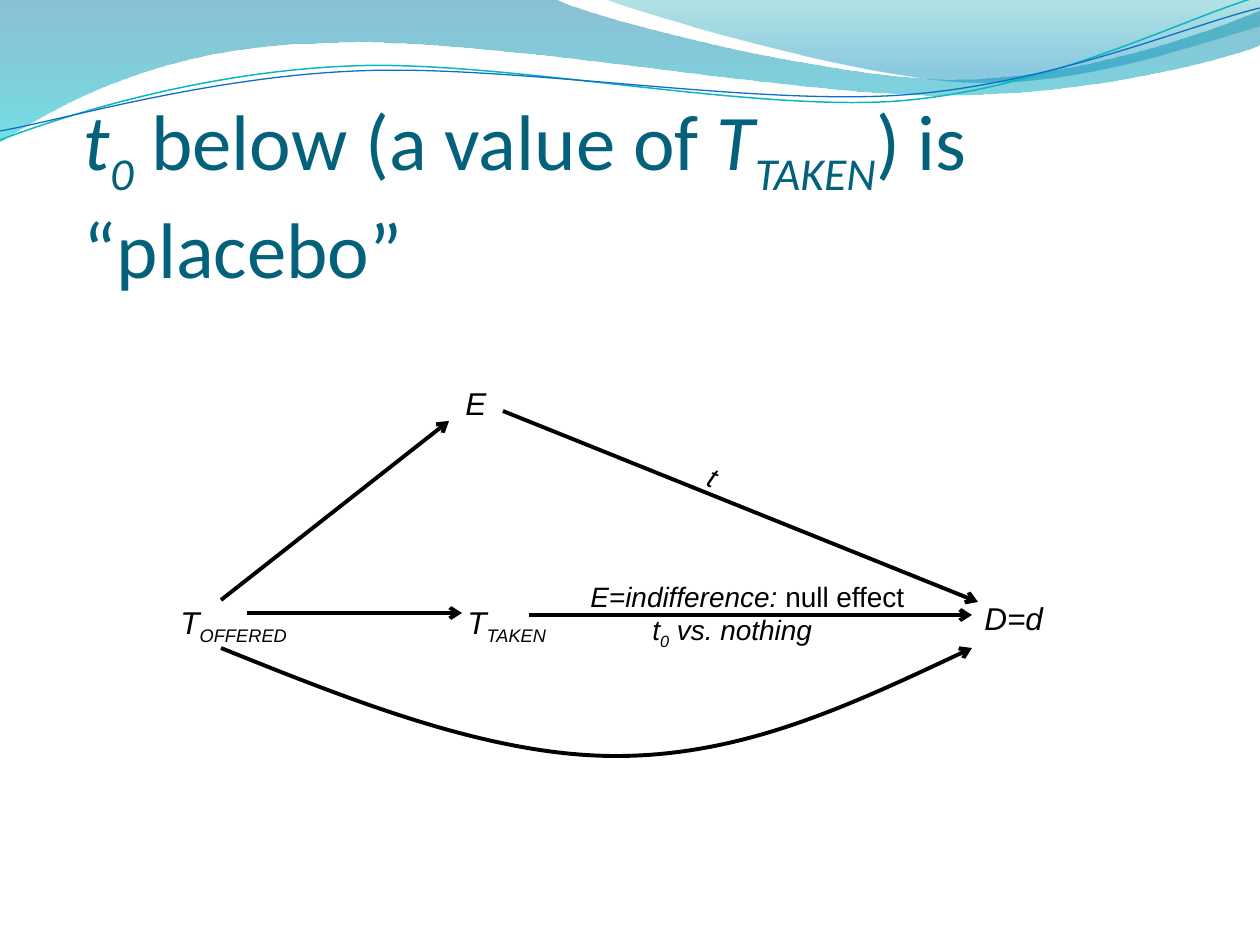
"""Build a slide with a causal diagram of treatment offered, taken and outcome."""
from dataclasses import dataclass

from lxml.etree import SubElement
from pptx import Presentation
from pptx.dml.color import RGBColor
from pptx.enum.shapes import MSO_CONNECTOR as Connector
from pptx.enum.text import MSO_ANCHOR as Anchor, MSO_AUTO_SIZE as AutoSize
from pptx.oxml.ns import qn
from pptx.util import Pt

PX = 914400 / 126


@dataclass(frozen=True)
class Theme:
    title_font: str = "Calibri"
    body_font: str = "Arial"
    title_color: str = "04617B"
    ink: str = "000000"
    title_size: int = 45
    node_size: int = 18
    label_size: int = 16
    arrow_width: float = 2.25


THEME = Theme()

TITLE = [("t", "i"), ("0", "is"), (" below (a value of ", ""), ("T", "i"),
         ("TAKEN", "is"), (") is “placebo”", "")]
TITLE_BOX = (84, 136, 1144, 158)

NODES = [
    ((168, 597, 158, 50), [("T", "i"), ("OFFERED", "is")]),
    ((455, 597, 113, 50), [("T", "i"), ("TAKEN", "is")]),
    ((972, 593, 92, 55), [("D=d", "i")]),
    ((453, 378, 50, 50), [("E", "i")]),
]

EDGE_LABEL_BOX = (696, 457, 49, 47)
EDGE_LABEL = [("t", "i")]
EDGE_LABEL_ANGLE = 23.3
EFFECT_BOX = (578, 573, 344, 81)
EFFECT_LINES = [
    [("E=indifference: ", "i"), ("null effect", "")],
    [("t", "i"), ("0", "is"), (" vs. nothing", "i")],
]
EFFECT_INDENTS = (0, 62)

ARROWS = [
    ((529, 615), (972, 615)),
    ((503, 411), (978, 602)),
    ((221, 600), (449, 421)),
    ((247, 613), (462, 613)),
]
ARC = [(221, 648), (355, 702, 491, 756, 616, 756), (743, 756, 857, 702, 972, 648)]

WAVE_BANDS = [
    ([(0, 0), (554, -1), (600, 21, 837, 79, 955, 79), (1075, 79, 1207, 33, 1260, 11),
      (1261, 45), (1239, 55, 1096, 96, 940, 95), (784, 95, 481, 35, 324, 43),
      (163, 45, 58, 105, -1, 142)],
     [(0, "0074A1", 45), (1, "00C6CF", 55)]),
    ([(604, -1), (641, 14, 859, 78, 969, 82), (1079, 87, 1211, 40, 1260, 26), (1260, 0)],
     [(0, "00A1A9", 30), (0.8, "008BBF", 45)]),
]
WAVE_LINES = [
    ([(0, 140), (60, 117, 199, 72, 349, 66), (498, 59, 747, 112, 898, 101),
      (1049, 89, 1182, 19, 1257, -3)], "0AB8BF", 0.85),
    ([(0, 131), (59, 121, 207, 77, 357, 71), (508, 64, 752, 106, 903, 95),
      (1053, 84, 1186, 26, 1260, 8)], "0F6FC6", 0.75),
]


def emu(*lengths):
    return [round(length * PX) for length in lengths]


def add_outline(slide, segments, close):
    points = [tuple(emu(*segment[i:i + 2]))
              for segment in segments for i in range(0, len(segment), 2)]
    builder = slide.shapes.build_freeform(*points[0], scale=1.0)
    builder.add_line_segments(points[1:], close=close)
    shape = builder.convert_to_shape()
    shape.shadow.inherit = False
    bend_curves(shape, segments)
    return shape


def bend_curves(shape, segments):
    steps = iter(list(shape._element.spPr.iter(qn("a:lnTo"))))
    for segment in segments[1:]:
        first = next(steps)
        if len(segment) == 6:
            first.tag = qn("a:cubicBezTo")
            for _ in range(2):
                step = next(steps)
                first.append(step[0])
                step.getparent().remove(step)


def add_band(slide, segments, stops):
    shape = add_outline(slide, segments, close=True)
    shape.line.fill.background()
    shape.fill.gradient()
    shape.fill.gradient_angle = 270
    for stop, (position, color, _) in zip(shape.fill.gradient_stops, stops):
        stop.position = position
        stop.color.rgb = RGBColor.from_string(color)
    for element, (_, _, opacity) in zip(shape._element.spPr.iter(qn("a:srgbClr")), stops):
        SubElement(element, qn("a:alpha"), val=str(opacity * 1000))


def style_line(shape, color, width, arrow=False):
    shape.line.color.rgb = RGBColor.from_string(color)
    shape.line.width = Pt(width)
    if arrow:
        SubElement(shape._element.spPr.find(qn("a:ln")), qn("a:tailEnd"), type="arrow")


def add_curve(slide, segments, color, width, arrow=False):
    shape = add_outline(slide, segments, close=False)
    shape.fill.background()
    style_line(shape, color, width, arrow)


def add_arrow(slide, start, end):
    connector = slide.shapes.add_connector(Connector.STRAIGHT, *emu(*start, *end))
    style_line(connector, THEME.ink, THEME.arrow_width, arrow=True)
    SubElement(connector._element.spPr, qn("a:effectLst"))


def add_text(slide, box, lines, size, font=THEME.body_font, color=THEME.ink,
             wrap=True, indents=(0,), fit=AutoSize.SHAPE_TO_FIT_TEXT):
    shape = slide.shapes.add_textbox(*emu(*box))
    frame = shape.text_frame
    frame.word_wrap = wrap
    frame.auto_size = fit
    for index, (runs, indent) in enumerate(zip(lines, indents)):
        paragraph = frame.add_paragraph() if index else frame.paragraphs[0]
        if indent:
            paragraph._p.get_or_add_pPr().set("marL", str(emu(indent)[0]))
        for text, style in runs:
            run = paragraph.add_run()
            run.text = text
            run.font.name = font
            run.font.size = Pt(size)
            run.font.italic = "i" in style
            run.font.color.rgb = RGBColor.from_string(color)
            if "s" in style:
                run.font._element.set("baseline", "-25000")
    return shape


def add_title(slide):
    frame = add_text(slide, TITLE_BOX, [TITLE], THEME.title_size, THEME.title_font,
                     THEME.title_color, fit=AutoSize.NONE).text_frame
    frame.vertical_anchor = Anchor.BOTTOM
    frame.margin_left = frame.margin_right = frame.margin_bottom = 0


def main():
    presentation = Presentation()
    presentation.slide_width, presentation.slide_height = emu(1260, 945)
    slide = presentation.slides.add_slide(presentation.slide_layouts[6])

    for segments, stops in WAVE_BANDS:
        add_band(slide, segments, stops)
    for segments, color, width in WAVE_LINES:
        add_curve(slide, segments, color, width)

    add_title(slide)
    for box, runs in NODES:
        add_text(slide, box, [runs], THEME.node_size)
    for start, end in ARROWS:
        add_arrow(slide, start, end)
    add_curve(slide, ARC, THEME.ink, THEME.arrow_width, arrow=True)

    edge_label = add_text(slide, EDGE_LABEL_BOX, [EDGE_LABEL], THEME.label_size)
    edge_label.rotation = EDGE_LABEL_ANGLE
    add_text(slide, EFFECT_BOX, EFFECT_LINES, THEME.label_size,
             wrap=False, indents=EFFECT_INDENTS)

    presentation.save("out.pptx")


if __name__ == "__main__":
    main()
